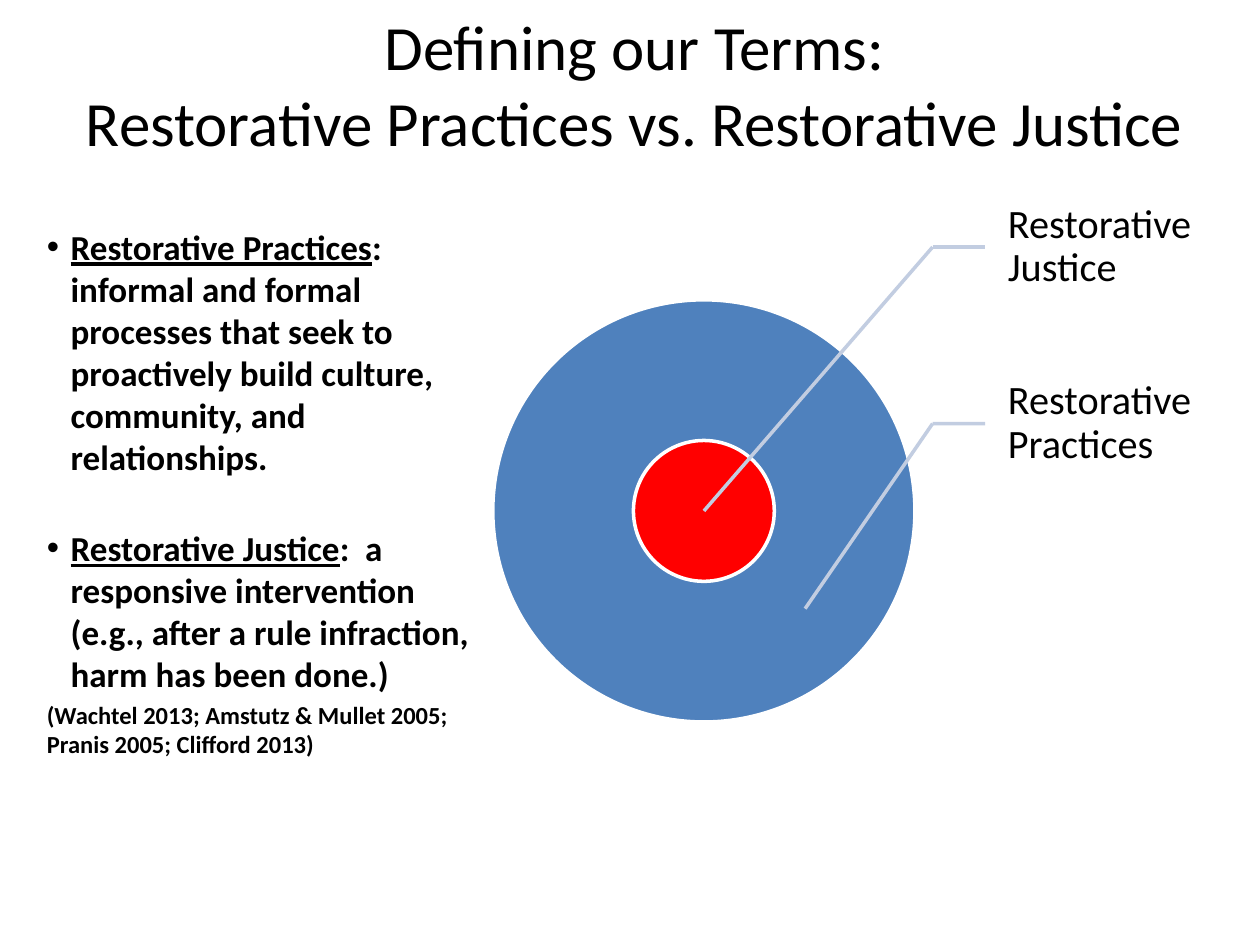
from dataclasses import dataclass

from lxml.etree import SubElement
from pptx import Presentation
from pptx.dml.color import RGBColor
from pptx.enum.shapes import MSO_CONNECTOR as Connector, MSO_SHAPE as Preset
from pptx.enum.text import MSO_ANCHOR as Anchor, MSO_AUTO_SIZE as AutoSize, PP_ALIGN as Align
from pptx.oxml.ns import qn
from pptx.util import Cm, Pt

FONT = "Calibri"
BLACK, WHITE, BLUE, RED, PALE_BLUE = "000000", "FFFFFF", "4F81BD", "FF0000", "C2CDE1"
CENTER_X, CENTER_Y = 14.19, 10.3
LABEL_LEFT, LABEL_TOP, LABEL_WIDTH, LABEL_HEIGHT = 19.86, 3.2, 4.27, 3.56
ELBOW_X = 18.8
HANGING = 0.48


@dataclass
class Ring:
    diameter: float
    color: str


@dataclass
class Callout:
    label: str
    target_x: float
    target_y: float


@dataclass
class Definition:
    term: str
    meaning: str
    space_before: float


RINGS = [Ring(8.51, BLUE), Ring(2.84, RED)]
CALLOUTS = [
    Callout("Restorative Justice", CENTER_X, CENTER_Y),
    Callout("Restorative Practices", 16.23, 12.27),
]
DEFINITIONS = [
    Definition(
        "Restorative Practices",
        ": informal and formal processes that seek to proactively build culture, "
        "community, and relationships.",
        4,
    ),
    Definition(
        "Restorative Justice",
        ":  a responsive intervention (e.g., after a rule infraction, harm has been done.)",
        28,
    ),
]
CITATION = "(Wachtel 2013; Amstutz & Mullet 2005; Pranis 2005; Clifford 2013)"


def rgb(color: str) -> RGBColor:
    return RGBColor.from_string(color)


def write(paragraph, text: str, size: float, bold: bool = False,
          underline: bool = False, color: str = BLACK) -> None:
    for index, line in enumerate(text.split("\n")):
        if index:
            paragraph.add_line_break()
        run = paragraph.add_run()
        run.text = line
        run.font.name = FONT
        run.font.size = Pt(size)
        run.font.bold = bold
        run.font.underline = underline
        run.font.color.rgb = rgb(color)


def place(shape, left: float, top: float, width: float, height: float) -> None:
    shape.left, shape.top = Cm(left), Cm(top)
    shape.width, shape.height = Cm(width), Cm(height)


def set_bullet(paragraph, bullet: str = "") -> None:
    properties = paragraph._p.get_or_add_pPr()
    indent = Cm(HANGING) if bullet else 0
    properties.set("marL", str(indent))
    properties.set("indent", str(-indent))
    if bullet:
        SubElement(properties, qn("a:buChar")).set("char", bullet)
    else:
        SubElement(properties, qn("a:buNone"))


def draw_ring(shapes, ring: Ring) -> None:
    radius = ring.diameter / 2
    circle = shapes.add_shape(Preset.OVAL, Cm(CENTER_X - radius), Cm(CENTER_Y - radius),
                              Cm(ring.diameter), Cm(ring.diameter))
    circle.shadow.inherit = False
    circle.fill.solid()
    circle.fill.fore_color.rgb = rgb(ring.color)
    circle.line.color.rgb = rgb(WHITE)
    circle.line.width = Pt(2)


def draw_leader(shapes, from_x: float, from_y: float, to_x: float, to_y: float):
    leader = shapes.add_connector(Connector.STRAIGHT, Cm(from_x), Cm(from_y), Cm(to_x), Cm(to_y))
    leader.line.color.rgb = rgb(PALE_BLUE)
    leader.line.width = Pt(2)
    SubElement(leader._element.spPr, qn("a:effectLst"))
    return leader


def draw_callout(shapes, callout: Callout, row: int) -> None:
    top = LABEL_TOP + row * LABEL_HEIGHT
    middle = top + LABEL_HEIGHT / 2
    label = shapes.add_textbox(Cm(LABEL_LEFT), Cm(top), Cm(LABEL_WIDTH), Cm(LABEL_HEIGHT))
    frame = label.text_frame
    frame.word_wrap = True
    frame.vertical_anchor = Anchor.MIDDLE
    frame.margin_left = Cm(0.46)
    frame.margin_top = frame.margin_right = frame.margin_bottom = Cm(0.08)
    frame.paragraphs[0].line_spacing = 0.9
    write(frame.paragraphs[0], callout.label, size=23)
    draw_leader(shapes, ELBOW_X, middle, LABEL_LEFT, middle).end_connect(label, 1)
    draw_leader(shapes, ELBOW_X, middle, callout.target_x, callout.target_y)


def fill_title(title) -> None:
    place(title, 1.27, 1.78, 23.04, 1.55)
    frame = title.text_frame
    frame.auto_size = AutoSize.NONE
    frame.vertical_anchor = Anchor.BOTTOM
    frame.paragraphs[0].alignment = Align.CENTER
    write(frame.paragraphs[0],
          "Defining our Terms:\nRestorative Practices vs. Restorative Justice", size=36)


def fill_body(body) -> None:
    place(body, 0.69, 4.42, 9.53, 13.31)
    frame = body.text_frame
    frame.auto_size = AutoSize.NONE
    for index, definition in enumerate(DEFINITIONS):
        paragraph = frame.add_paragraph() if index else frame.paragraphs[0]
        paragraph.space_before = Pt(definition.space_before)
        set_bullet(paragraph, "•")
        write(paragraph, definition.term, size=20, bold=True, underline=True)
        write(paragraph, definition.meaning, size=20, bold=True)
    citation = frame.add_paragraph()
    citation.space_before = Pt(3)
    set_bullet(citation)
    write(citation, CITATION, size=14, bold=True)


def main() -> None:
    deck = Presentation()
    deck.slide_width, deck.slide_height = Cm(25.4), Cm(19.05)
    slide = deck.slides.add_slide(deck.slide_layouts[1])
    fill_title(slide.shapes.title)
    fill_body(slide.placeholders[1])
    for ring in RINGS:
        draw_ring(slide.shapes, ring)
    for row, callout in enumerate(CALLOUTS):
        draw_callout(slide.shapes, callout, row)
    deck.save("out.pptx")


if __name__ == "__main__":
    main()
